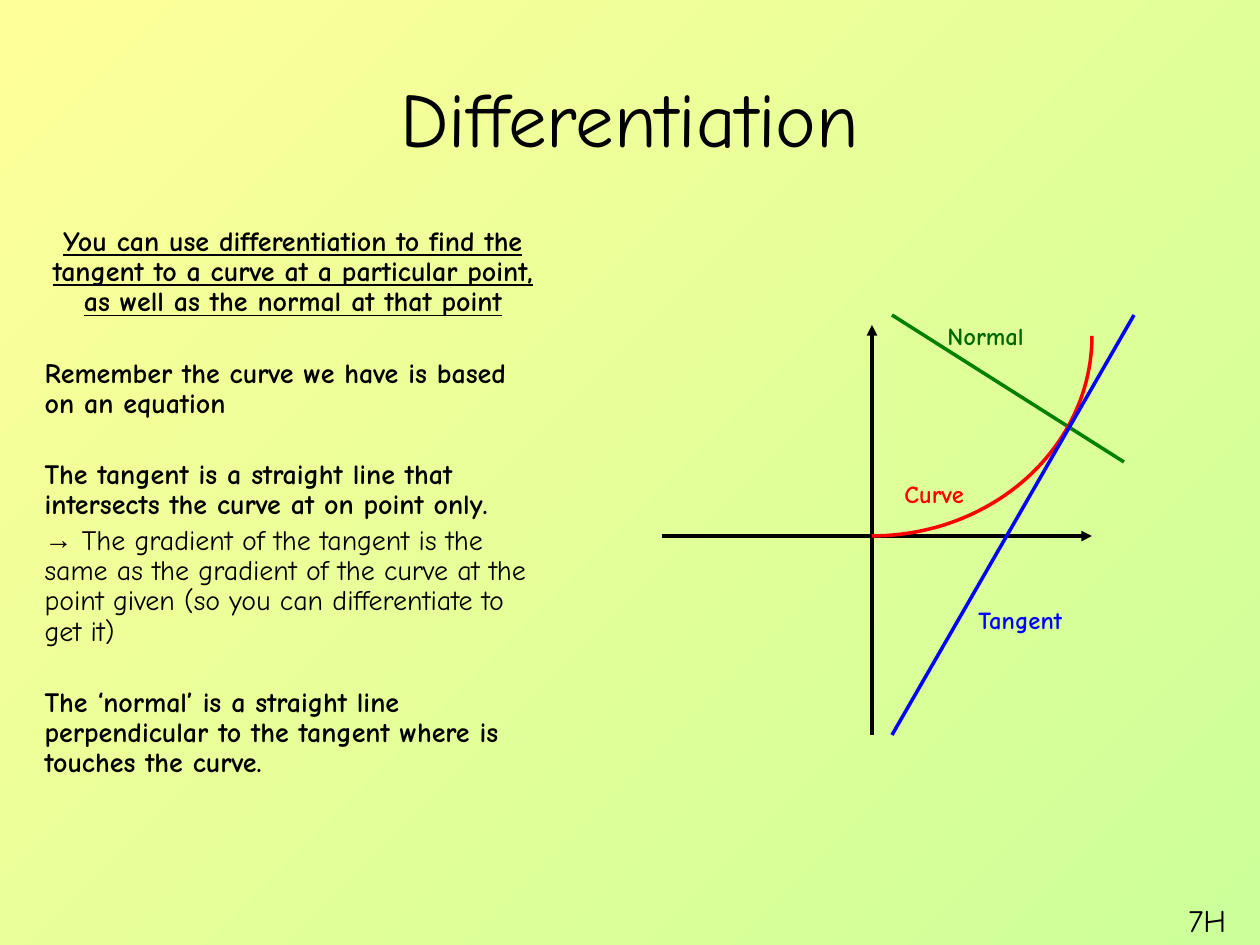
import math

from pptx import Presentation, util as u
from pptx.dml.color import RGBColor
from pptx.enum import text
from pptx.oxml.ns import qn
from lxml import etree

BLACK = RGBColor(0x00, 0x00, 0x00)
RED = RGBColor(0xFF, 0x00, 0x00)
BLUE = RGBColor(0x00, 0x00, 0xFF)
GREEN = RGBColor(0x00, 0x80, 0x00)
DARK_GREEN = RGBColor(0x00, 0x66, 0x00)
YELLOW = RGBColor(0xFF, 0xFF, 0x99)
LIME = RGBColor(0xCC, 0xFF, 0x99)

FONT = "Comic Neue"
PX_PER_INCH = 126
CENTER = text.PP_ALIGN.CENTER
LEFT = text.PP_ALIGN.LEFT


def px(length):
    return u.Inches(length / PX_PER_INCH)


class Sketch:
    """Holds the current slide and the style of its elements."""

    def __init__(self, slide, line_width=2):
        self.slide = slide
        self.line_width = u.Pt(line_width)

    def background(self, first, last):
        fill = self.slide.background.fill
        fill.gradient()
        fill.gradient_angle = 315
        for stop, color in zip(fill.gradient_stops, (first, last)):
            stop.color.rgb = color

    def place(self, shape, left, top, width, height):
        shape.left, shape.top = px(left), px(top)
        shape.width, shape.height = px(width), px(height)

    def span(self, para, words, size, color=BLACK, bold=False, underline=False):
        span = para.add_run()
        span.text = words
        font = span.font
        font.name, font.size = FONT, u.Pt(size)
        font.bold, font.underline = bold, underline
        font.color.rgb = color

    def title(self, words, *box):
        title = self.slide.shapes.title
        self.place(title, *box)
        title.text_frame.vertical_anchor = text.MSO_ANCHOR.MIDDLE
        para = title.text_frame.paragraphs[0]
        para.alignment = CENTER
        self.span(para, words, 44)

    def body(self, items, *box):
        """Each item is (words, space before in points, bullet, style)."""
        body = self.slide.placeholders[1]
        self.place(body, *box)
        frame = body.text_frame
        frame.word_wrap = True
        frame.auto_size = text.MSO_AUTO_SIZE.NONE
        for index, (words, gap, bullet, style) in enumerate(items):
            para = frame.add_paragraph() if index else frame.paragraphs[0]
            para.alignment = CENTER if style.get("underline") else LEFT
            para.line_spacing = 0.9
            para.space_before = u.Pt(gap)
            self.bullet(para, bullet)
            self.span(para, words, 16, **style)

    def bullet(self, para, mark):
        properties = para._p.get_or_add_pPr()
        properties.set("marL", "0")
        properties.set("indent", "0")
        if mark:
            etree.SubElement(properties, qn("a:buChar")).set("char", mark)
        else:
            etree.SubElement(properties, qn("a:buNone"))

    def label(self, words, left, top, width, height, size=14, color=BLACK, bold=True):
        box = self.slide.shapes.add_textbox(px(left), px(top), px(width), px(height))
        frame = box.text_frame
        frame.word_wrap = True
        frame.auto_size = text.MSO_AUTO_SIZE.SHAPE_TO_FIT_TEXT
        self.span(frame.paragraphs[0], words, size, color, bold)

    def stroke(self, shape, color):
        shape.line.color.rgb = color
        shape.line.width = self.line_width

    def line(self, start, end, color, arrow=False):
        line = self.slide.shapes.add_connector(1, *map(px, start + end))
        self.stroke(line, color)
        properties = line.element.spPr
        if arrow:
            outline = properties.find(qn("a:ln"))
            etree.SubElement(outline, qn("a:tailEnd")).set("type", "triangle")
        etree.SubElement(properties, qn("a:effectLst"))

    def quarter_curve(self, center, radii, color, steps=48):
        """Draw the lower right quarter of an ellipse."""
        angles = [math.pi / 2 * step / steps for step in range(steps + 1)]
        points = [(px(center[0] + radii[0] * math.cos(angle)),
                   px(center[1] + radii[1] * math.sin(angle))) for angle in angles]
        builder = self.slide.shapes.build_freeform(*points[0])
        builder.add_line_segments(points[1:], close=False)
        curve = builder.convert_to_shape()
        curve.fill.background()
        curve.shadow.inherit = False
        self.stroke(curve, color)


def main():
    deck = Presentation()
    deck.slide_width, deck.slide_height = px(1260), px(945)
    page = Sketch(deck.slides.add_slide(deck.slide_layouts[1]))
    page.background(YELLOW, LIME)

    page.title("Differentiation", 63, 38, 1134, 157)
    strong = {"bold": True}
    page.body([
        ("You can use differentiation to find the tangent to a curve at a "
         "particular point, as well as the normal at that point",
         0, None, {"bold": True, "underline": True}),
        ("Remember the curve we have is based on an equation", 23.5, None, strong),
        ("The tangent is a straight line that intersects the curve at on point only.",
         23.5, None, strong),
        (" The gradient of the tangent is the same as the gradient of the curve "
         "at the point given (so you can differentiate to get it)", 3, "→", {}),
        ("The ‘normal’ is a straight line perpendicular to the tangent where is "
         "touches the curve.", 23.5, None, strong),
    ], 32, 221, 522, 661)
    page.label("7H", 1176, 895, 84, 50, size=18, bold=False)

    origin = (872, 536)
    page.line((1124, 462), (892, 315), GREEN)
    page.line((origin[0], 735), (origin[0], 325), BLACK, arrow=True)
    page.line((662, origin[1]), (1092, origin[1]), BLACK, arrow=True)
    page.quarter_curve((origin[0], origin[1] - 200), (220, 200), RED)
    page.line((892, 735), (1134, 315), BLUE)

    page.label("Curve", 892, 473, 95, 42, color=RED)
    page.label("Tangent", 966, 599, 158, 42, color=BLUE)
    page.label("Normal", 935, 315, 116, 42, color=DARK_GREEN)
    deck.save("out.pptx")


if __name__ == "__main__":
    main()
